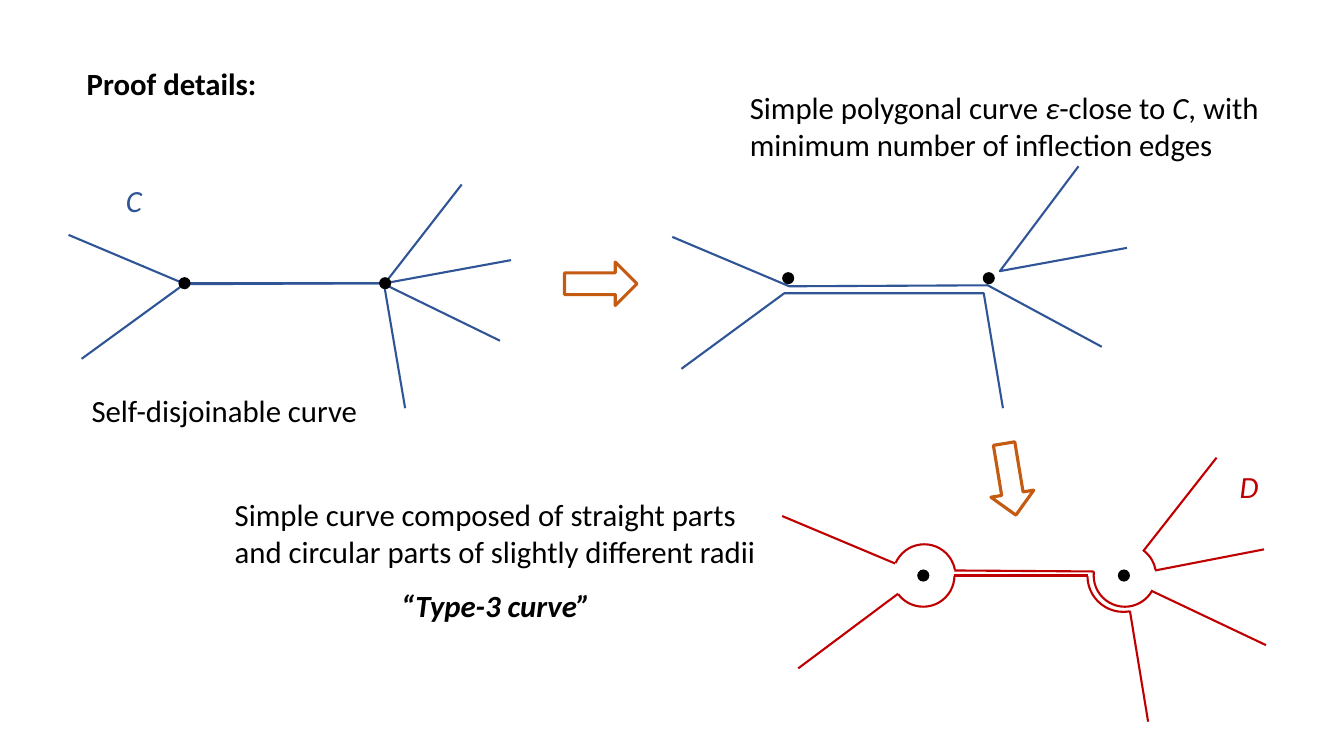
from lxml import etree
from pptx import Presentation
from pptx.dml.color import RGBColor
from pptx.enum.shapes import MSO_CONNECTOR, MSO_SHAPE
from pptx.enum.text import MSO_ANCHOR, PP_ALIGN
from pptx.oxml.ns import qn
from pptx.util import Pt

STRAIGHT = MSO_CONNECTOR.STRAIGHT
OVAL, ARC, ARROW = MSO_SHAPE.OVAL, MSO_SHAPE.ARC, MSO_SHAPE.RIGHT_ARROW
TOP, LEFT = MSO_ANCHOR.TOP, PP_ALIGN.LEFT

TITLE_ONLY = 5
FONT, TEXT_SIZE = "Calibri", 22
BLACK, WHITE, BLUE, RED, ORANGE = "000000", "FFFFFF", "2F5597", "C00000", "C55A11"
DOT_RADIUS, VERTEX_GAP = 4.32, 143.3
LINE_HEIGHT, TWO_LINES = 33.8, 60.5

# Polylines of the two blue curves
CURVE_C = [
    [(49, 167.8), (132.5, 203), (275, 202.3), (329.8, 131.8)],
    [(58.3, 256.3), (132.5, 202.3), (275, 202.3), (365, 185.8)],
    [(289.4, 291.6), (274.3, 203), (357.1, 243.4)],
]
POLYGONAL_CURVE = [
    [(480.2, 169.2), (563.8, 204.5), (705.6, 203.8), (787, 247.7)],
    [(770.4, 118.8), (714.2, 193.7), (805, 177.1)],
    [(486.7, 263.5), (560.2, 209.5), (702.7, 209.5), (716.4, 291.6)],
]

# Circular parts of D: centre x, centre y, radius, start and end in degrees
CIRCULAR_PARTS = [
    (660.2, 411.1, 22.3, 203.73, 349.76),
    (659.5, 411.1, 22.3, 0.25, 143.37),
    (803.5, 411.1, 22.3, 28.55, 187.52),
    (802.4, 411.5, 25.6, 79.83, 179.36),
    (803.5, 411.1, 22.3, 307.39, 349.76),
]
STRAIGHT_PARTS = [
    ((681.8, 407.5), (781.2, 408.2)),
    ((681.8, 411.1), (776.9, 411.1)),
    ((558.7, 368.6), (639.4, 402.5)),
    ((570.2, 477.4), (641.5, 424.1)),
    ((820.1, 515.5), (807.1, 436.3)),
    ((904.3, 460.8), (822.2, 421.9)),
    ((902.9, 392.4), (825.1, 407.5)),
    ((869, 326.9), (816.5, 393.8)),
]


def rgb(hex_colour):
    return RGBColor.from_string(hex_colour)


def style_stroke(shape, colour, width=1.5):
    shape.line.color.rgb = rgb(colour)
    shape.line.width = Pt(width)


def write_runs(frame, runs, colour=BLACK):
    """Fill the frame with one paragraph of (text, style) runs; style holds b and i."""
    frame.word_wrap = True
    frame.vertical_anchor = TOP
    paragraph = frame.paragraphs[0]
    paragraph.alignment = LEFT
    for text, style in runs:
        run = paragraph.add_run()
        run.text = text
        run.font.name, run.font.size = FONT, Pt(TEXT_SIZE)
        run.font.bold, run.font.italic = "b" in style, "i" in style
        run.font.color.rgb = rgb(colour)


def add_label(shapes, left, top, width, height, runs, colour=BLACK):
    label = shapes.add_textbox(Pt(left), Pt(top), Pt(width), Pt(height))
    write_runs(label.text_frame, runs, colour)


def add_polyline(shapes, points, colour):
    start, *rest = [(Pt(x), Pt(y)) for x, y in points]
    builder = shapes.build_freeform(*start)
    builder.add_line_segments(rest, close=False)
    polyline = builder.convert_to_shape()
    polyline.shadow.inherit = False
    polyline.fill.background()
    style_stroke(polyline, colour)


def add_round(shapes, kind, x, y, radius):
    round_shape = shapes.add_shape(
        kind, Pt(x - radius), Pt(y - radius), Pt(2 * radius), Pt(2 * radius))
    round_shape.shadow.inherit = False
    return round_shape


def add_vertices(shapes, x, y):
    for vertex_x in (x, x + VERTEX_GAP):
        dot = add_round(shapes, OVAL, vertex_x, y, DOT_RADIUS)
        dot.fill.solid()
        dot.fill.fore_color.rgb = rgb(BLACK)
        dot.line.fill.background()


def add_arc(shapes, x, y, radius, start, end, colour):
    arc = add_round(shapes, ARC, x, y, radius)
    # Angles are stored as 60000ths of a degree, adjustments as 100000ths
    arc.adjustments[0], arc.adjustments[1] = start * 0.6, end * 0.6
    arc.fill.background()
    style_stroke(arc, colour)


def add_segment(shapes, start, end, colour):
    segment = shapes.add_connector(STRAIGHT, *map(Pt, start + end))
    style_stroke(segment, colour)
    etree.SubElement(segment._element.spPr, qn("a:effectLst"))


def add_step_arrow(shapes, left, top, rotation=0):
    arrow = shapes.add_shape(ARROW, Pt(left), Pt(top), Pt(51.8), Pt(31))
    arrow.shadow.inherit = False
    arrow.rotation = rotation
    arrow.fill.solid()
    arrow.fill.fore_color.rgb = rgb(WHITE)
    style_stroke(arrow, ORANGE, 2.25)


def add_blue_curve(shapes, polylines, x, y):
    for points in polylines:
        add_polyline(shapes, points, BLUE)
    add_vertices(shapes, x, y)


def main():
    deck = Presentation()
    deck.slide_width, deck.slide_height = Pt(960), Pt(540)
    slide = deck.slides.add_slide(deck.slide_layouts[TITLE_ONLY])
    shapes = slide.shapes

    # Title
    title = shapes.title
    title.left, title.top, title.width, title.height = map(Pt, (54.7, 42.5, 146.2, LINE_HEIGHT))
    write_runs(title.text_frame, [("Proof details:", "b")])

    # Self-disjoinable curve C
    add_blue_curve(shapes.add_group_shape().shapes, CURVE_C, 131.8, 202.3)
    add_label(shapes, 82.8, 126, 49, LINE_HEIGHT, [("C", "i")], BLUE)
    add_label(shapes, 58.3, 276.5, 239, LINE_HEIGHT, [("Self-disjoinable curve", "")])

    # Simple polygonal curve
    add_blue_curve(shapes.add_group_shape().shapes, POLYGONAL_CURVE, 563, 198.7)
    add_label(shapes, 528.5, 59.8, 382.3, TWO_LINES, [
        ("Simple polygonal curve ", ""), ("ε", "i"), ("-close to ", ""), ("C", "i"),
        (", with minimum number of inflection edges", "")])

    # Type-3 curve D
    curve_d = shapes.add_group_shape().shapes
    add_vertices(curve_d, 659.5, 411.1)
    for part in CIRCULAR_PARTS:
        add_arc(curve_d, *part, RED)
    for start, end in STRAIGHT_PARTS:
        add_segment(curve_d, start, end, RED)
    add_label(curve_d, 878.4, 330.5, 49, LINE_HEIGHT, [("D", "i")], RED)
    add_label(shapes, 160.6, 350.6, 410.4, TWO_LINES, [
        ("Simple curve composed of straight parts and circular parts "
         "of slightly different radii", "")])
    add_label(shapes, 279.4, 415.4, 175.7, LINE_HEIGHT, [("“Type-3 curve”", "bi")])

    # Arrows from one curve to the next
    add_step_arrow(shapes, 403.2, 187.2)
    add_step_arrow(shapes, 695.5, 326.9, 80.6)

    deck.save("out.pptx")


if __name__ == "__main__":
    main()
